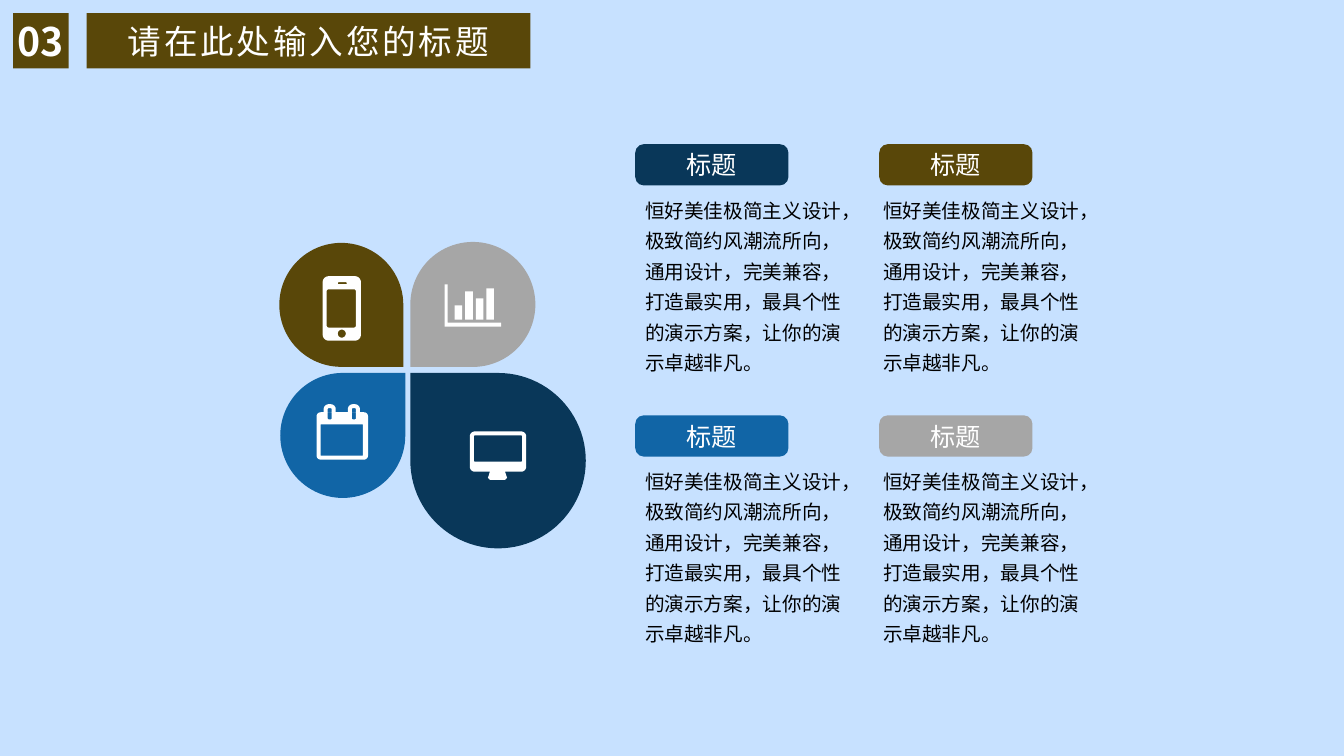
"""Build a four-petal diagram slide with icons, headings and descriptions."""
from dataclasses import dataclass
from math import cos, radians, sin

from lxml.etree import SubElement
from pptx import Presentation
from pptx.dml.color import RGBColor
from pptx.enum.shapes import MSO_SHAPE
from pptx.enum.text import MSO_ANCHOR, MSO_AUTO_SIZE, PP_ALIGN
from pptx.oxml.ns import qn
from pptx.util import Inches, Pt


@dataclass(frozen=True)
class Theme:
    font: str = "Noto Sans CJK SC"
    background: str = "C7E1FF"
    navy: str = "093759"
    olive: str = "594709"
    blue: str = "1165A6"
    gray: str = "A6A6A6"
    white: str = "FFFFFF"
    black: str = "000000"
    number_size: int = 28
    title_size: int = 24
    heading_size: int = 18
    body_size: int = 14


THEME = Theme()
DESCRIPTION = (
    "恒好美佳极简主义设计，极致简约风潮流所向，通用设计，完美兼容，"
    "打造最实用，最具个性的演示方案，让你的演示卓越非凡。"
)
PETALS = [
    (4.07, 3.7, 1.74, 270, THEME.navy),
    (4.07, 2.4, 1.24, 180, THEME.gray),
    (2.78, 3.7, 1.24, 0, THEME.blue),
    (2.77, 2.41, 1.23, 90, THEME.olive),
]
CARD_COLORS = [[THEME.navy, THEME.olive], [THEME.blue, THEME.gray]]


def write_text(frame, text, size, color, bold=False, align=PP_ALIGN.CENTER, spacing=0):
    paragraph = frame.paragraphs[0]
    paragraph.alignment = align
    run = paragraph.add_run()
    run.text = text
    font = run.font
    font.size = Pt(size)
    font.bold = bold
    font.color.rgb = RGBColor.from_string(color)
    font.name = THEME.font
    properties = run._r.get_or_add_rPr()
    SubElement(properties, qn("a:ea")).set("typeface", THEME.font)
    if spacing:
        properties.set("spc", str(spacing * 100))
    return paragraph


def rounded_box(left, top, right, bottom, top_radius=0, bottom_radius=None):
    lower = top_radius if bottom_radius is None else bottom_radius
    corners = [
        (left + top_radius, top + top_radius, top_radius, 180),
        (right - top_radius, top + top_radius, top_radius, 270),
        (right - lower, bottom - lower, lower, 0),
        (left + lower, bottom - lower, lower, 90),
    ]
    return [
        (x + radius * cos(radians(start + turn)), y + radius * sin(radians(start + turn)))
        for x, y, radius, start in corners
        for turn in (range(0, 91, 15) if radius else [0])
    ]


def calendar_icon():
    rings = [
        contour
        for left in (3.21, 3.45)
        for contour in (
            rounded_box(left, 4.01, left + 0.12, 4.09, 0.05, 0),
            rounded_box(left + 0.04, 4.05, left + 0.08, 4.16, 0.01),
        )
    ]
    return [rounded_box(3.14, 4.09, 3.65, 4.56, 0.04), rounded_box(3.18, 4.21, 3.6, 4.52), *rings]


def monitor_icon():
    stand = [(4.86, 4.68), (5.01, 4.68), (5.03, 4.74), (5.01, 4.76), (4.86, 4.76), (4.84, 4.74)]
    return [
        rounded_box(4.66, 4.28, 5.22, 4.68, 0.05),
        rounded_box(4.7, 4.32, 5.18, 4.58, 0.01),
        stand,
    ]


def chart_icon():
    axes = [(4.41, 2.82), (4.44, 2.82), (4.44, 3.2), (4.97, 3.2), (4.97, 3.24), (4.41, 3.24)]
    bars = [
        rounded_box(4.51 + 0.105 * index, top, 4.585 + 0.105 * index, 3.17)
        for index, top in enumerate((3.03, 2.89, 2.96, 2.86))
    ]
    return [axes, *bars]


def phone_icon():
    return [
        rounded_box(3.2, 2.74, 3.58, 3.38, 0.06),
        rounded_box(3.24, 2.87, 3.53, 3.25, 0.02),
        rounded_box(3.35, 2.8, 3.44, 2.82, 0.01),
        rounded_box(3.35, 3.27, 3.43, 3.35, 0.04),
    ]


class SlideBuilder:
    def __init__(self, presentation, theme):
        self.theme = theme
        self.slide = presentation.slides.add_slide(presentation.slide_layouts[5])
        self.shapes = self.slide.shapes
        fill = self.slide.background.fill
        fill.solid()
        fill.fore_color.rgb = RGBColor.from_string(theme.background)

    def paint(self, shape, color):
        shape.fill.solid()
        shape.fill.fore_color.rgb = RGBColor.from_string(color)
        shape.line.fill.background()

    def title(self, text, left, top, width, height):
        shape = self.shapes.title
        shape.left, shape.top = Inches(left), Inches(top)
        shape.width, shape.height = Inches(width), Inches(height)
        self.paint(shape, self.theme.olive)
        frame = shape.text_frame
        frame.auto_size = MSO_AUTO_SIZE.NONE
        frame.vertical_anchor = MSO_ANCHOR.MIDDLE
        write_text(frame, text, self.theme.title_size, self.theme.white, spacing=2)

    def preset(self, kind, left, top, width, height, color):
        shape = self.shapes.add_shape(
            kind, Inches(left), Inches(top), Inches(width), Inches(height)
        )
        shape.shadow.inherit = False
        self.paint(shape, color)
        return shape

    def petal(self, left, top, size, rotation, color):
        self.preset(MSO_SHAPE.TEAR, left, top, size, size, color).rotation = rotation

    def icon(self, contours):
        scaled = [[(Inches(x), Inches(y)) for x, y in contour] for contour in contours]
        builder = self.shapes.build_freeform(*scaled[0][0])
        for contour in scaled:
            builder.move_to(*contour[0])
            builder.add_line_segments(contour[1:], close=True)
        shape = builder.convert_to_shape()
        shape.shadow.inherit = False
        self.paint(shape, self.theme.white)

    def number(self, text, left, top, size):
        frame = self.preset(
            MSO_SHAPE.RECTANGLE, left, top, size, size, self.theme.olive
        ).text_frame
        frame.margin_left = frame.margin_right = frame.margin_top = frame.margin_bottom = 0
        frame.vertical_anchor = MSO_ANCHOR.MIDDLE
        write_text(frame, text, self.theme.number_size, self.theme.white, bold=True)

    def heading(self, text, left, top, color):
        shape = self.preset(MSO_SHAPE.ROUNDED_RECTANGLE, left, top, 1.52, 0.41, color)
        shape.adjustments[0] = 0.21
        shape.text_frame.vertical_anchor = MSO_ANCHOR.MIDDLE
        write_text(shape.text_frame, text, self.theme.heading_size, self.theme.white)

    def description(self, text, left, top):
        box = self.shapes.add_textbox(Inches(left), Inches(top), Inches(2.27), Inches(1.94))
        frame = box.text_frame
        frame.word_wrap = True
        frame.auto_size = MSO_AUTO_SIZE.SHAPE_TO_FIT_TEXT
        paragraph = write_text(
            frame, text, self.theme.body_size, self.theme.black, align=PP_ALIGN.LEFT
        )
        paragraph.line_spacing = 1.3
        paragraph.space_before = paragraph.space_after = Pt(6)


def main():
    presentation = Presentation()
    presentation.slide_width, presentation.slide_height = Inches(13.33), Inches(7.5)
    builder = SlideBuilder(presentation, THEME)
    builder.title("请在此处输入您的标题", 0.86, 0.13, 4.4, 0.55)
    builder.number("03", 0.13, 0.13, 0.55)
    for petal in PETALS:
        builder.petal(*petal)
    for icon in (calendar_icon, monitor_icon, chart_icon, phone_icon):
        builder.icon(icon())
    for row, colors in enumerate(CARD_COLORS):
        top = 1.43 + 2.69 * row
        for column, color in enumerate(colors):
            builder.heading("标题", 6.3 + 2.42 * column, top, color)
            builder.description(DESCRIPTION, 6.3 + 2.36 * column, top + 0.42)
    presentation.save("out.pptx")


if __name__ == "__main__":
    main()
